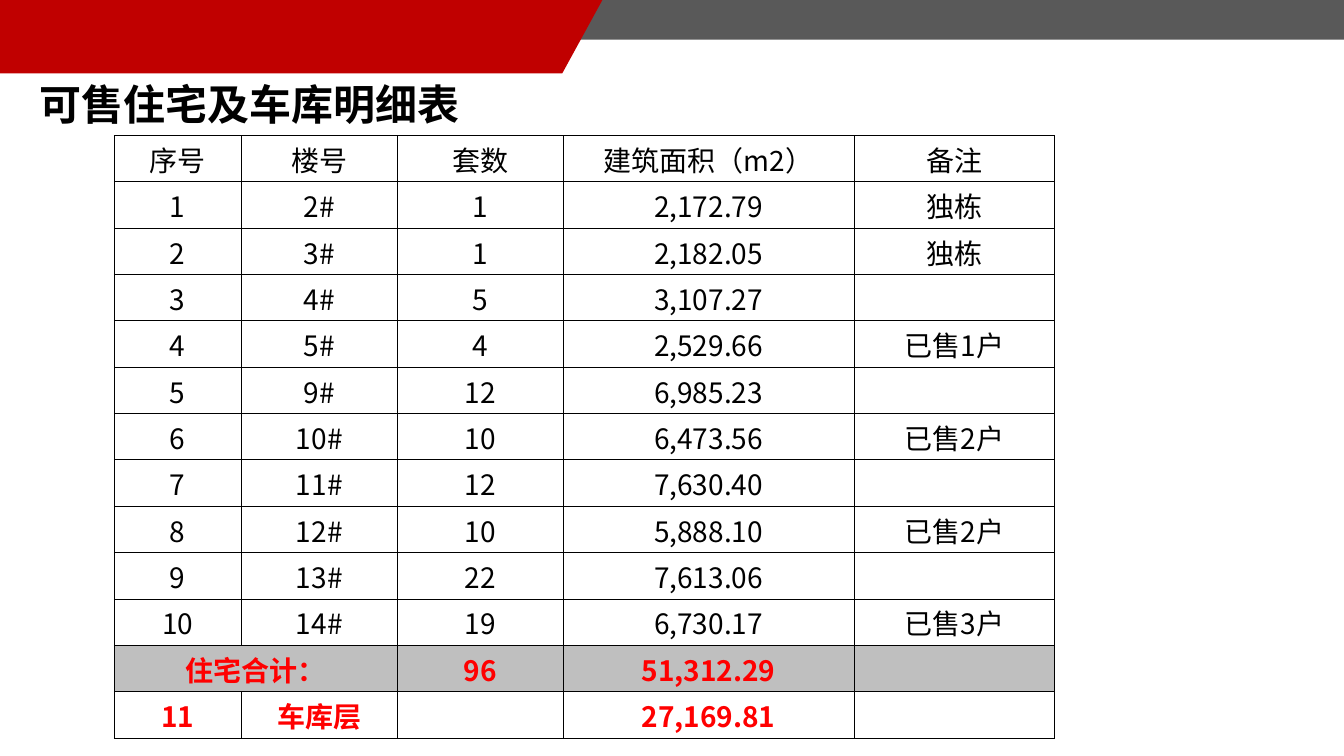
from dataclasses import dataclass

from lxml.etree import SubElement
from pptx import Presentation
from pptx.dml.color import RGBColor
from pptx.enum.text import MSO_ANCHOR, MSO_AUTO_SIZE, PP_ALIGN
from pptx.oxml.ns import qn
from pptx.util import Cm, Pt

# Content
TITLE = "可售住宅及车库明细表"
HEADER = ("序号", "楼号", "套数", "建筑面积（m2）", "备注")
BUILDINGS = [
    ("2#", "1", "2,172.79", "独栋"),
    ("3#", "1", "2,182.05", "独栋"),
    ("4#", "5", "3,107.27", ""),
    ("5#", "4", "2,529.66", "已售1户"),
    ("9#", "12", "6,985.23", ""),
    ("10#", "10", "6,473.56", "已售2户"),
    ("11#", "12", "7,630.40", ""),
    ("12#", "10", "5,888.10", "已售2户"),
    ("13#", "22", "7,613.06", ""),
    ("14#", "19", "6,730.17", "已售3户"),
]
TOTAL = ("住宅合计：", "", "96", "51,312.29", "")
GARAGE = ("11", "车库层", "", "27,169.81", "")

# Layout, in centimetres
COLUMN_WIDTHS = (3.2, 3.93, 4.18, 7.33, 5.06)
TABLE_LEFT, TABLE_TOP, TABLE_HEIGHT = 2.88, 3.41, 15.19
GREY_BAND = [(34.01, -0.18), (33.91, 1), (14.48, 1), (15.09, 0)]
RED_BAND = [(-0.15, 1.85), (-0.18, -0.03), (15.21, -0.05), (14.17, 1.85)]


@dataclass(frozen=True)
class Theme:
    font: str = "Noto Sans CJK SC"
    title_size: Pt = Pt(30)
    cell_size: Pt = Pt(20)
    border_width: Pt = Pt(0.5)
    text: str = "000000"
    red: str = "C00000"
    grey: str = "595959"
    emphasis: str = "FF0000"
    total_fill: str = "BFBFBF"


THEME = Theme()


def style(paragraph, size, color, bold):
    for run in paragraph.runs:
        run.font.name = THEME.font
        run.font.size = size
        run.font.bold = bold
        run.font.color.rgb = RGBColor.from_string(color)
        SubElement(run._r.rPr, qn("a:ea"), typeface=THEME.font)


def add_band(slide, points, color):
    corners = [(Cm(x), Cm(y)) for x, y in points]
    builder = slide.shapes.build_freeform(*corners[0])
    builder.add_line_segments(corners[1:], close=True)
    band = builder.convert_to_shape()
    band.shadow.inherit = False
    band.fill.solid()
    band.fill.fore_color.rgb = RGBColor.from_string(color)
    band.line.fill.background()


def add_borders(cell):
    properties = cell._tc.get_or_add_tcPr()
    for side in ("a:lnL", "a:lnR", "a:lnT", "a:lnB"):
        line = SubElement(properties, qn(side), w=str(THEME.border_width))
        fill = SubElement(line, qn("a:solidFill"))
        SubElement(fill, qn("a:srgbClr"), val=THEME.text)


def fill_cell(cell, text, emphasized, shaded):
    cell.margin_left = cell.margin_right = cell.margin_top = Cm(0.03)
    cell.margin_bottom = 0
    cell.vertical_anchor = MSO_ANCHOR.MIDDLE
    add_borders(cell)
    if shaded:
        cell.fill.solid()
        cell.fill.fore_color.rgb = RGBColor.from_string(THEME.total_fill)
    else:
        cell.fill.background()
    cell.text_frame.text = text
    paragraph = cell.text_frame.paragraphs[0]
    paragraph.alignment = PP_ALIGN.CENTER
    color = THEME.emphasis if emphasized else THEME.text
    style(paragraph, THEME.cell_size, color, emphasized)


def add_title(slide):
    title = slide.shapes.title
    title.left, title.top, title.width, title.height = Cm(0.74), Cm(1.85), Cm(15.8), Cm(1.55)
    frame = title.text_frame
    frame.text = TITLE
    frame.auto_size = MSO_AUTO_SIZE.NONE
    frame.vertical_anchor = MSO_ANCHOR.MIDDLE
    frame.margin_top = frame.margin_bottom = 0
    frame.paragraphs[0].alignment = PP_ALIGN.LEFT
    style(frame.paragraphs[0], THEME.title_size, THEME.text, True)


def add_details(slide):
    numbered = [(str(n), *building) for n, building in enumerate(BUILDINGS, 1)]
    rows = [HEADER, *numbered, TOTAL, GARAGE]
    details = slide.shapes.add_table(
        len(rows), len(HEADER), Cm(TABLE_LEFT), Cm(TABLE_TOP),
        Cm(sum(COLUMN_WIDTHS)), Cm(TABLE_HEIGHT)).table
    details.first_row = details.horz_banding = False
    for column, width in zip(details.columns, COLUMN_WIDTHS):
        column.width = Cm(width)
    for r, row in enumerate(rows):
        details.rows[r].height = Cm(TABLE_HEIGHT / len(rows))
        for c, text in enumerate(row):
            fill_cell(details.cell(r, c), text, row in (TOTAL, GARAGE), row is TOTAL)
    total = rows.index(TOTAL)
    details.cell(total, 0).merge(details.cell(total, 1))


def main():
    deck = Presentation()
    deck.slide_width, deck.slide_height = Cm(33.87), Cm(19.05)
    slide = deck.slides.add_slide(deck.slide_layouts[5])
    # Header bands
    add_band(slide, GREY_BAND, THEME.grey)
    add_band(slide, RED_BAND, THEME.red)
    # Title and table
    add_title(slide)
    add_details(slide)
    deck.save("out.pptx")


if __name__ == "__main__":
    main()
